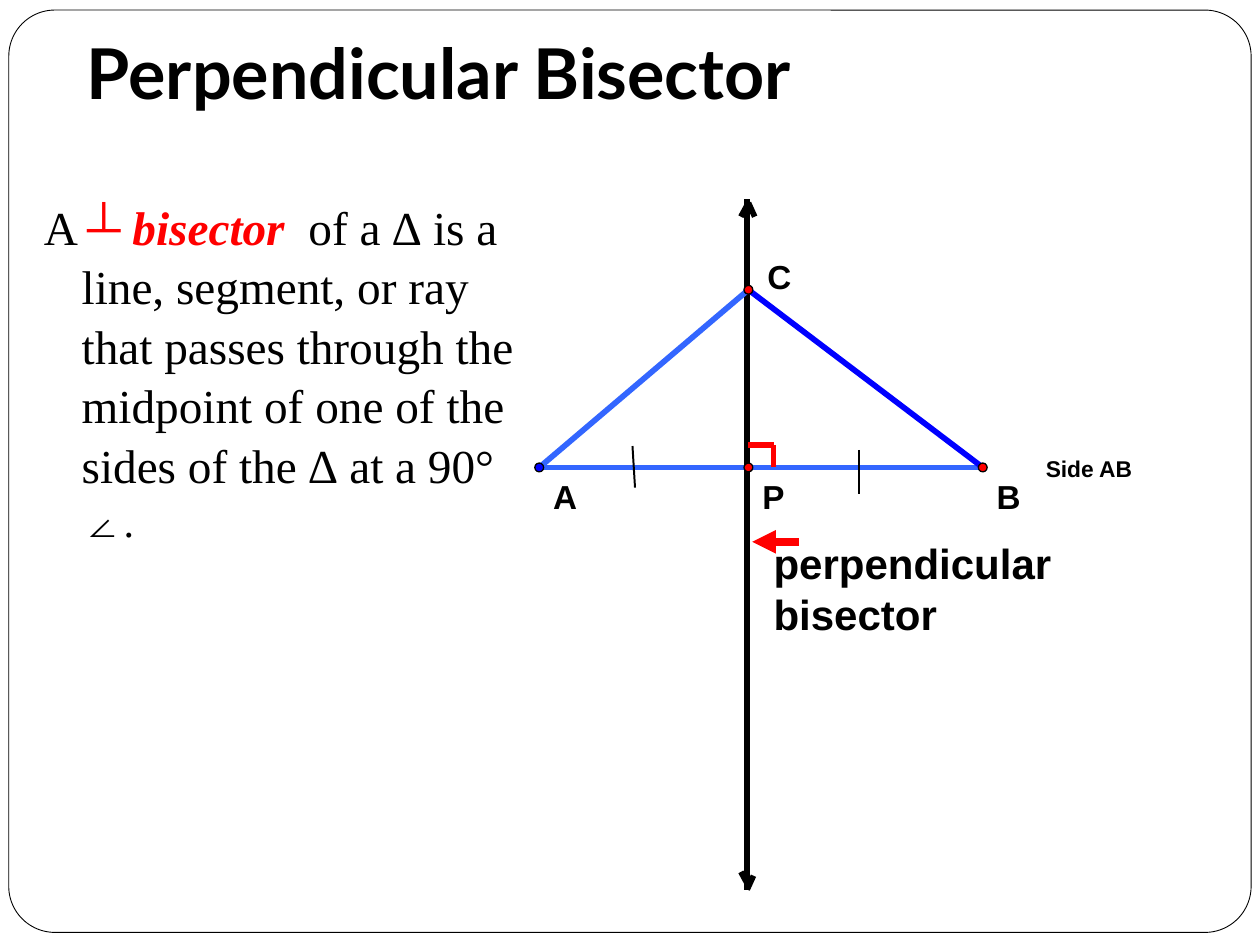
from lxml import etree
from pptx import Presentation
from pptx.dml.color import RGBColor
from pptx.enum.shapes import MSO_CONNECTOR, MSO_SHAPE
from pptx.enum.text import MSO_ANCHOR, PP_ALIGN
from pptx.oxml.ns import qn
from pptx.util import Inches, Pt

STRAIGHT = MSO_CONNECTOR.STRAIGHT
OVAL, ROUNDED = MSO_SHAPE.OVAL, MSO_SHAPE.ROUNDED_RECTANGLE
LEFT, TOP, BOTTOM = PP_ALIGN.LEFT, MSO_ANCHOR.TOP, MSO_ANCHOR.BOTTOM
TITLE_ONLY = 5

COLORS = {
    "black": "000000",
    "white": "FFFFFF",
    "red": "FF0000",
    "blue": "0000FF",
    "light blue": "3366FF",
}
THICK, THIN = 3.25, 1.13

A, B, C, P = (4.28, 3.71), (7.8, 3.71), (5.94, 2.3), (5.94, 3.71)
DOT = 0.07


def rgb(name):
    return RGBColor.from_string(COLORS[name])


def add_run(para, text, size, font, color="black", bold=False, italic=False):
    span = para.add_run()
    span.text = text
    span.font.size = Pt(size)
    span.font.name = font
    span.font.color.rgb = rgb(color)
    span.font.bold = bold
    span.font.italic = italic


def add_shape(page, kind, left, top, width, height, fill, line_width):
    shape = page.shapes.add_shape(
        kind, Inches(left), Inches(top), Inches(width), Inches(height))
    shape.shadow.inherit = False
    shape.fill.solid()
    shape.fill.fore_color.rgb = rgb(fill)
    shape.line.color.rgb = rgb("black")
    shape.line.width = Pt(line_width)
    return shape


def add_line(page, start, end, color="black", width=THICK, arrow=False):
    line = page.shapes.add_connector(
        STRAIGHT, *(Inches(value) for value in (*start, *end)))
    line.line.color.rgb = rgb(color)
    line.line.width = Pt(width)
    properties = line.element.spPr
    if arrow:
        outline = properties.find(qn("a:ln"))
        etree.SubElement(outline, qn("a:tailEnd"), type="triangle")
    etree.SubElement(properties, qn("a:effectLst"))


def add_box(page, left, top, width, height, wrap=True):
    box = page.shapes.add_textbox(
        Inches(left), Inches(top), Inches(width), Inches(height))
    box.text_frame.word_wrap = wrap
    return box.text_frame


def add_label(page, text, left, top, width, height, size, wrap=False):
    frame = add_box(page, left, top, width, height, wrap)
    frame.margin_left = frame.margin_right = 0
    frame.margin_top = frame.margin_bottom = 0
    add_run(frame.paragraphs[0], text, size, "Arial", bold=True)


def add_title(page):
    title = page.shapes.title
    title.left, title.top = Inches(0.59), Inches(0.22)
    title.width, title.height = Inches(8.92), Inches(0.78)
    frame = title.text_frame
    frame.vertical_anchor = BOTTOM
    frame.margin_bottom = Inches(0.1)
    para = frame.paragraphs[0]
    para.alignment = LEFT
    add_run(para, "Perpendicular Bisector", 40, "Lato", bold=True)


def add_frame(page):
    """Draw the rounded page border behind the title."""
    border = add_shape(page, ROUNDED, 0.07, 0.08, 9.86, 7.32, "white", 0.5)
    border.adjustments[0] = 0.05
    page.shapes.title.element.addprevious(border.element)


def add_definition(page):
    frame = add_box(page, 0.25, 1.5, 4.15, 4.6)
    frame.vertical_anchor = TOP
    para = frame.paragraphs[0]
    para.space_before = Pt(5.8)
    para.line_spacing = 1.05
    indent = para._p.get_or_add_pPr()
    indent.set("marL", str(Inches(0.3)))
    indent.set("indent", str(Inches(-0.3)))
    font = "Times New Roman"
    add_run(para, "A ", 27, font)
    add_run(para, "┴ bisector ", 27, font, "red", bold=True, italic=True)
    add_run(para, " of a ∆ is a line, segment, or ray that passes through "
            "the midpoint of one of the sides of the ∆ at a 90° ", 27, font)
    add_run(para, "∠.", 24, font)


def add_bisector(page):
    """Draw the vertical line with its open arrowheads."""
    add_line(page, (5.93, 1.58), (5.93, 7.06))
    add_line(page, (5.98, 6.95), (5.93, 7.06))
    add_line(page, (5.88, 6.92), (5.94, 7.03))
    for barb_x in (5.88, 5.99):
        add_line(page, (barb_x, 1.72), (5.94, 1.61))


def add_triangle(page):
    add_line(page, A, B, "light blue")
    add_line(page, (5.02, 3.54), (5.04, 3.87), width=THIN)
    add_line(page, (6.82, 3.57), (6.82, 3.92), width=THIN)
    add_line(page, C, A, "light blue")
    add_line(page, C, B, "blue")
    corner = (6.14, 3.53)
    add_line(page, (P[0], corner[1]), corner, "red")
    add_line(page, corner, (corner[0], P[1]), "red")


def add_point(page, name, center, color, label_shift):
    x, y = center
    add_shape(page, OVAL, x - DOT / 2, y - DOT / 2, DOT, DOT, color, 0)
    shift_x, shift_y = label_shift
    add_label(page, name, x + shift_x, y + shift_y, 0.19, 0.32, 19)


def main():
    deck = Presentation()
    deck.slide_width, deck.slide_height = Inches(10), Inches(7.5)
    page = deck.slides.add_slide(deck.slide_layouts[TITLE_ONLY])
    add_title(page)
    add_frame(page)
    add_definition(page)
    add_bisector(page)
    add_triangle(page)
    add_label(page, "Side AB", 8.3, 3.61, 0.69, 0.22, 13)
    add_label(page, "perpendicular bisector", 6.14, 4.27, 3, 0.8, 24, wrap=True)
    below = (0.11, 0.07)
    add_point(page, "P", P, "red", below)
    add_point(page, "A", A, "blue", below)
    add_point(page, "B", B, "red", below)
    add_point(page, "C", C, "red", (0.15, -0.27))
    add_line(page, (6.34, 4.3), (5.97, 4.3), "red", 4.5, arrow=True)
    deck.save("out.pptx")


if __name__ == "__main__":
    main()
